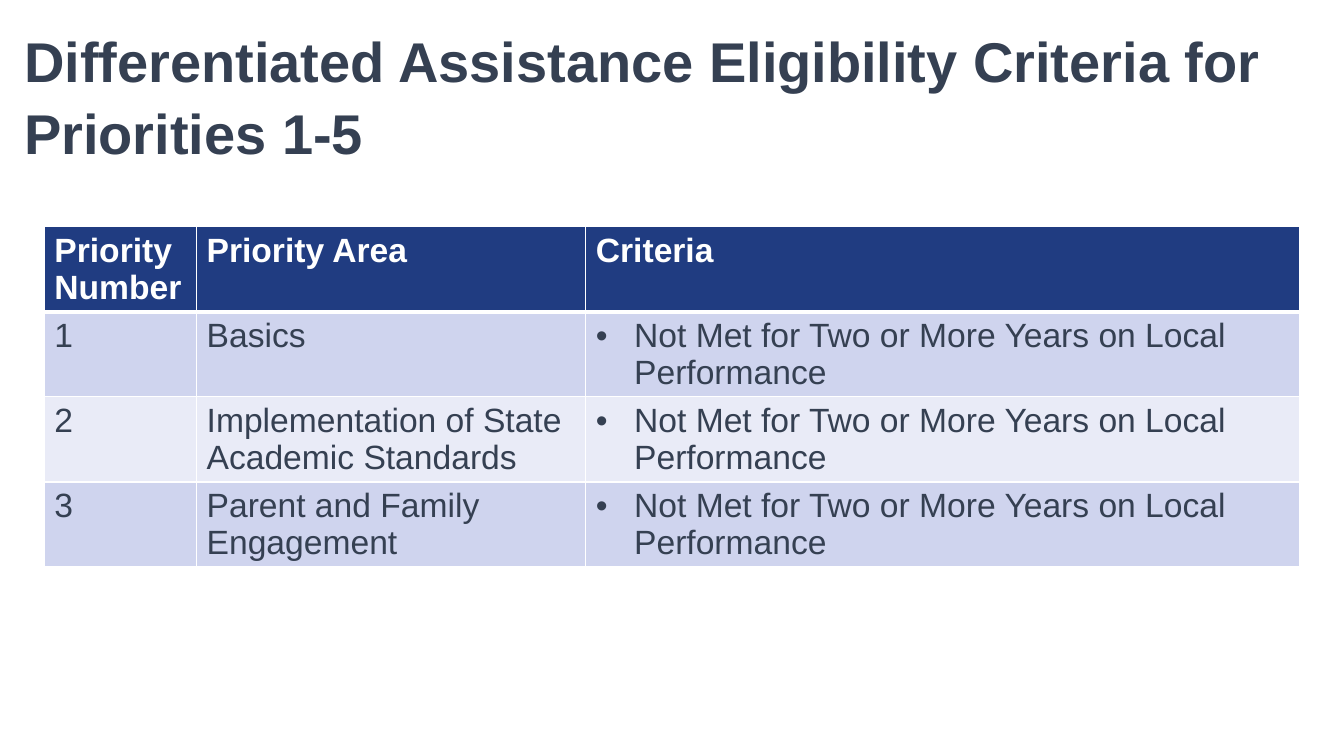
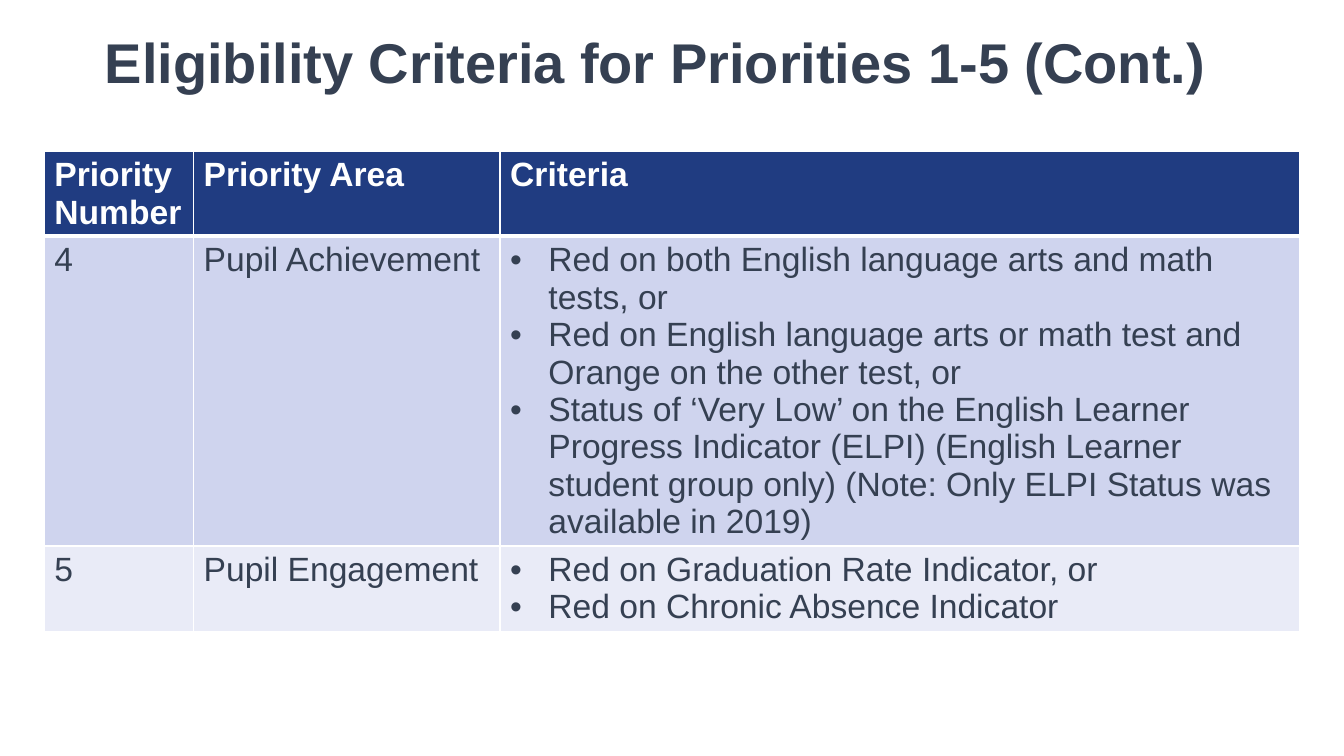
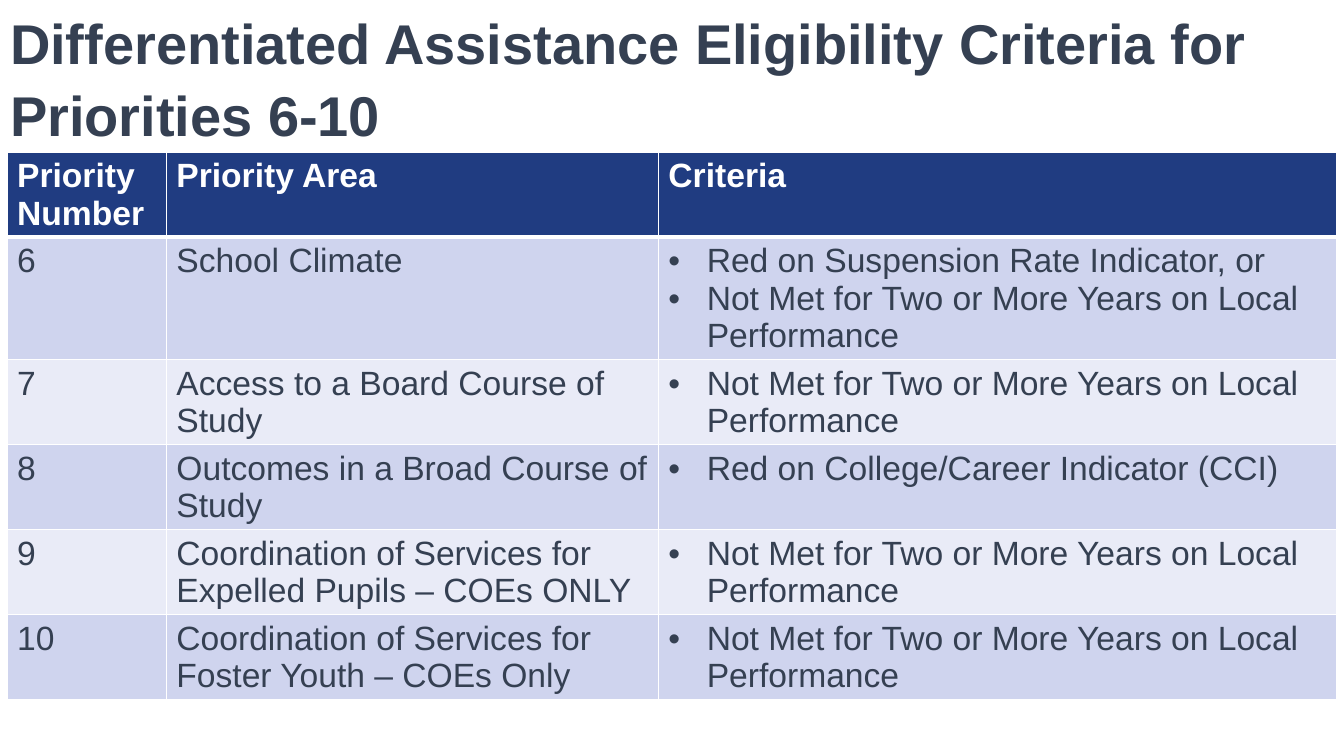
import pptx
import pptx.dml.color
import pptx.enum.text
import pptx.oxml
import pptx.oxml.ns
import pptx.util

PX = 9144  # EMU per px, 100 px to the inch
SLIDE_W, SLIDE_H = 1333, 750
ROW_H = 41  # minimum; rows grow with their text
INDENT = 38

RGB = pptx.dml.color.RGBColor
WHITE = RGB(0xFF, 0xFF, 0xFF)
INK = RGB(0x35, 0x40, 0x52)
NAVY = RGB(0x20, 0x3C, 0x81)
BANDS = (RGB(0xCF, 0xD4, 0xEE), RGB(0xE9, 0xEB, 0xF7))
FONT = "Arial"

# Content
HEADER = ("Priority\nNumber", "Priority Area", ["Criteria"])
NOT_MET = "Not Met for Two or More Years on Local Performance"
SLIDES = [
    {
        "title": "Differentiated Assistance Eligibility Criteria for Priorities 1-5",
        "title_box": (14, 21, 1320, 144),
        "table_at": (44, 225),
        "cols": (151, 386, 708),
        "rows": [
            ("1", "Basics", [NOT_MET]),
            ("2", "Implementation of State Academic Standards", [NOT_MET]),
            ("3", "Parent and Family Engagement", [NOT_MET]),
        ],
    },
    {
        "title": "Eligibility Criteria for Priorities 1-5 (Cont.)",
        "title_box": (94, 11, 1145, 94),
        "table_at": (44, 150),
        "cols": (148, 304, 793),
        "rows": [
            ("4", "Pupil Achievement", [
                "Red on both English language arts and math tests, or",
                "Red on English language arts or math test and Orange on the other test, or",
                "Status of ‘Very Low’ on the English Learner Progress Indicator (ELPI) "
                "(English Learner student group only) "
                "(Note: Only ELPI Status was available in 2019)",
            ]),
            ("5", "Pupil Engagement", [
                "Red on Graduation Rate Indicator, or",
                "Red on Chronic Absence Indicator",
            ]),
        ],
    },
    {
        "title": "Differentiated Assistance Eligibility Criteria for Priorities 6-10",
        "title_box": (0, 19, 1320, 112),
        "table_at": (7, 151),
        "cols": (158, 488, 673),
        "rows": [
            ("6", "School Climate", ["Red on Suspension Rate Indicator, or", NOT_MET]),
            ("7", "Access to a Board Course of Study", [NOT_MET]),
            ("8", "Outcomes in a Broad Course of Study",
             ["Red on College/Career Indicator (CCI)"]),
            ("9", "Coordination of Services for Expelled Pupils – COEs ONLY", [NOT_MET]),
            ("10", "Coordination of Services for Foster Youth – COEs Only", [NOT_MET]),
        ],
    },
]


def px(*lengths):
    return [n * PX for n in lengths]


def write(tf, text, size=24, color=INK, bold=False, bullet=False, spacing=None):
    """Fill a text frame with one paragraph per item of text."""
    items = [text] if isinstance(text, str) else text
    for i, item in enumerate(items):
        p = tf.paragraphs[0] if i == 0 else tf.add_paragraph()
        p.text = item
        p.alignment = pptx.enum.text.PP_ALIGN.LEFT
        if spacing:
            p.line_spacing = spacing
        if bullet:
            pPr = p._p.get_or_add_pPr()
            pPr.set("marL", str(INDENT * PX))
            pPr.set("indent", str(-INDENT * PX))
            bu_font = pptx.oxml.ns.qn("a:buFont")
            pPr.makeelement(bu_font)
            for tag, key, value in (("buFont", "typeface", FONT), ("buChar", "char", "•")):
                el = pPr.makeelement(pptx.oxml.ns.qn("a:" + tag), {key: value})
                pPr.append(el)
        for r in p.runs:
            r.font.name = FONT
            r.font.size = pptx.util.Pt(size)
            r.font.bold = bold
            r.font.color.rgb = color


def set_borders(cell, **widths):
    """White borders, widths in points for L, R, T, B."""
    tcPr = cell._tc.get_or_add_tcPr()
    for side in "LRTB":
        tcPr.append(pptx.oxml.parse_xml(
            f'<a:ln{side} {pptx.oxml.ns.nsdecls("a")} w="{pptx.util.Pt(widths.get(side, 1))}">'
            f'<a:solidFill><a:srgbClr val="{WHITE}"/></a:solidFill></a:ln{side}>'))


def add_title(slide, text, box):
    sp = slide.shapes.title
    sp.left, sp.top, sp.width, sp.height = px(*box)
    tf = sp.text_frame
    tf.word_wrap = True
    tf.auto_size = pptx.enum.text.MSO_AUTO_SIZE.NONE
    tf.vertical_anchor = pptx.enum.text.MSO_ANCHOR.MIDDLE
    write(tf, text, size=40, bold=True, spacing=1.07)


def add_criteria_table(slide, at, cols, rows):
    rows = [HEADER] + rows
    table = slide.shapes.add_table(
        len(rows), len(cols), *px(*at, sum(cols), ROW_H * len(rows))).table
    table.horz_banding = False
    for column, width in zip(table.columns, cols):
        column.width = width * PX
    for i, row in enumerate(rows):
        table.rows[i].height = ROW_H * PX
        header = i == 0
        for j, text in enumerate(row):
            cell = table.cell(i, j)
            set_borders(cell, B=3 if header else 1, T=3 if i == 1 else 1)
            cell.fill.solid()
            cell.fill.fore_color.rgb = NAVY if header else BANDS[(i - 1) % 2]
            write(cell.text_frame, text, color=WHITE if header else INK,
                  bold=header, bullet=not header and isinstance(text, list))


def main():
    prs = pptx.Presentation()
    prs.slide_width, prs.slide_height = px(SLIDE_W, SLIDE_H)
    title_only = prs.slide_layouts[5]
    for content in SLIDES:
        slide = prs.slides.add_slide(title_only)
        add_title(slide, content["title"], content["title_box"])
        add_criteria_table(slide, content["table_at"], content["cols"], content["rows"])
    prs.save("out.pptx")


if __name__ == "__main__":
    main()
